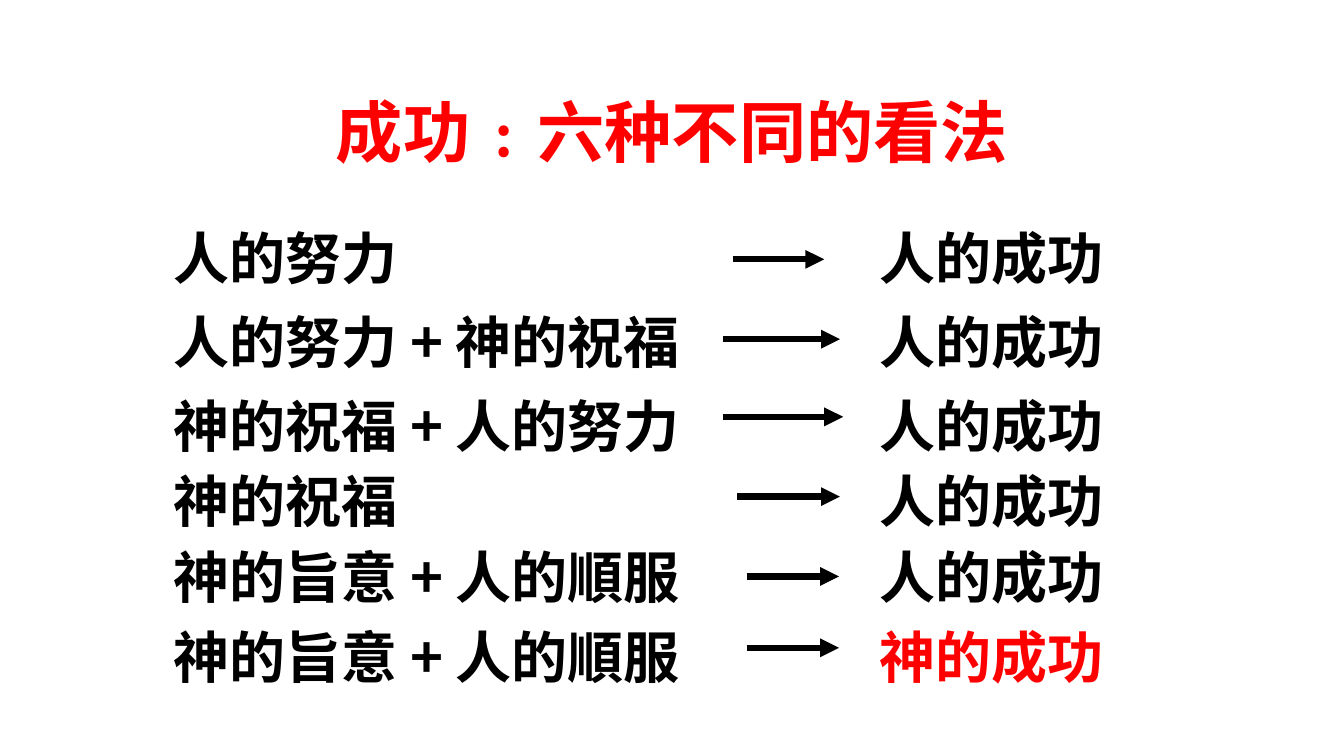
from dataclasses import dataclass

from pptx import Presentation
from pptx import util as u
from pptx.dml.color import RGBColor
from pptx.enum import shapes, text
from pptx.oxml import ns
from lxml import etree

PX = 9525


@dataclass(frozen=True)
class Theme:
    font: str = "Noto Sans CJK SC"
    ink: str = "000000"
    red: str = "FF0000"
    head: int = 48
    body: int = 40
    line: float = 4.5


@dataclass(frozen=True)
class View:
    cause: str
    fruit: str
    top: int
    width: int
    start: int
    end: int
    level: int
    tone: str


THEME = Theme()
LEFT, HIGH = 156, 74
STEP, STOPS = 96, 7
MAN, GOD = "人的成功", "神的成功"
VIEWS = [
    View("人的努力", MAN, 208, 983, 698, 785, 247, THEME.ink),
    View("人的努力 + 神的祝福", MAN, 288, 1020, 689, 800, 323, THEME.ink),
    View("神的祝福 + 人的努力", MAN, 368, 1020, 689, 803, 397, THEME.ink),
    View("神的祝福", MAN, 440, 908, 702, 800, 473, THEME.ink),
    View("神的旨意 + 人的順服", MAN, 512, 968, 711, 799, 549, THEME.ink),
    View("神的旨意 + 人的順服", GOD, 588, 1020, 711, 799, 617, THEME.red),
]


def px(n: int) -> int:
    return u.Emu(n * PX)


def add_text(slide, box: tuple[int, ...], parts: list[tuple[str, str]], size: int):
    frame = slide.shapes.add_textbox(*map(px, box)).text_frame
    frame.word_wrap = True
    para = frame.paragraphs[0]
    font = para.font
    font.name, font.size, font.bold = THEME.font, u.Pt(size), True
    font.color.rgb = RGBColor.from_string(parts[0][1])
    props = para._p.pPr.find(ns.qn("a:defRPr"))
    etree.SubElement(props, ns.qn("a:ea"), typeface=THEME.font)
    for words, tone in parts:
        run = para.add_run()
        run.text = words
        if tone != parts[0][1]:
            run.font.color.rgb = RGBColor.from_string(tone)
    return frame


def set_tabs(para) -> None:
    tabs = etree.Element(ns.qn("a:tabLst"))
    for n in range(1, STOPS + 1):
        etree.SubElement(tabs, ns.qn("a:tab"), pos=str(px(n * STEP)), algn="l")
    para._p.pPr.find(ns.qn("a:defRPr")).addprevious(tabs)


def add_arrow(slide, start: int, end: int, level: int) -> None:
    arrow = slide.shapes.add_connector(
        shapes.MSO_CONNECTOR.STRAIGHT, px(start), px(level), px(end), px(level)
    )
    arrow.line.width = u.Pt(THEME.line)
    arrow.line.color.rgb = RGBColor.from_string(THEME.ink)
    etree.SubElement(arrow.line._get_or_add_ln(), ns.qn("a:tailEnd"), type="triangle")
    etree.SubElement(arrow._element.spPr, ns.qn("a:effectLst"))


def add_view(slide, view: View) -> None:
    tabs = "\t" * (2 if "+" in view.cause else 5)
    if view.tone == THEME.ink:
        parts = [(view.cause + tabs + view.fruit, THEME.ink)]
    else:
        parts = [(view.cause + tabs, THEME.ink), (view.fruit, view.tone)]
    frame = add_text(slide, (LEFT, view.top, view.width, HIGH), parts, THEME.body)
    frame.auto_size = text.MSO_AUTO_SIZE.SHAPE_TO_FIT_TEXT
    set_tabs(frame.paragraphs[0])
    add_arrow(slide, view.start, view.end, view.level)


def main() -> None:
    deck = Presentation()
    deck.slide_width, deck.slide_height = px(1280), px(720)
    slide = deck.slides.add_slide(deck.slide_layouts[6])
    title = add_text(
        slide, (232, 64, 816, 120), [("成功﹕六种不同的看法", THEME.red)], THEME.head
    )
    title.vertical_anchor = text.MSO_ANCHOR.MIDDLE
    title.paragraphs[0].alignment = text.PP_ALIGN.CENTER
    for view in VIEWS:
        add_view(slide, view)
    deck.save("out.pptx")


if __name__ == "__main__":
    main()
